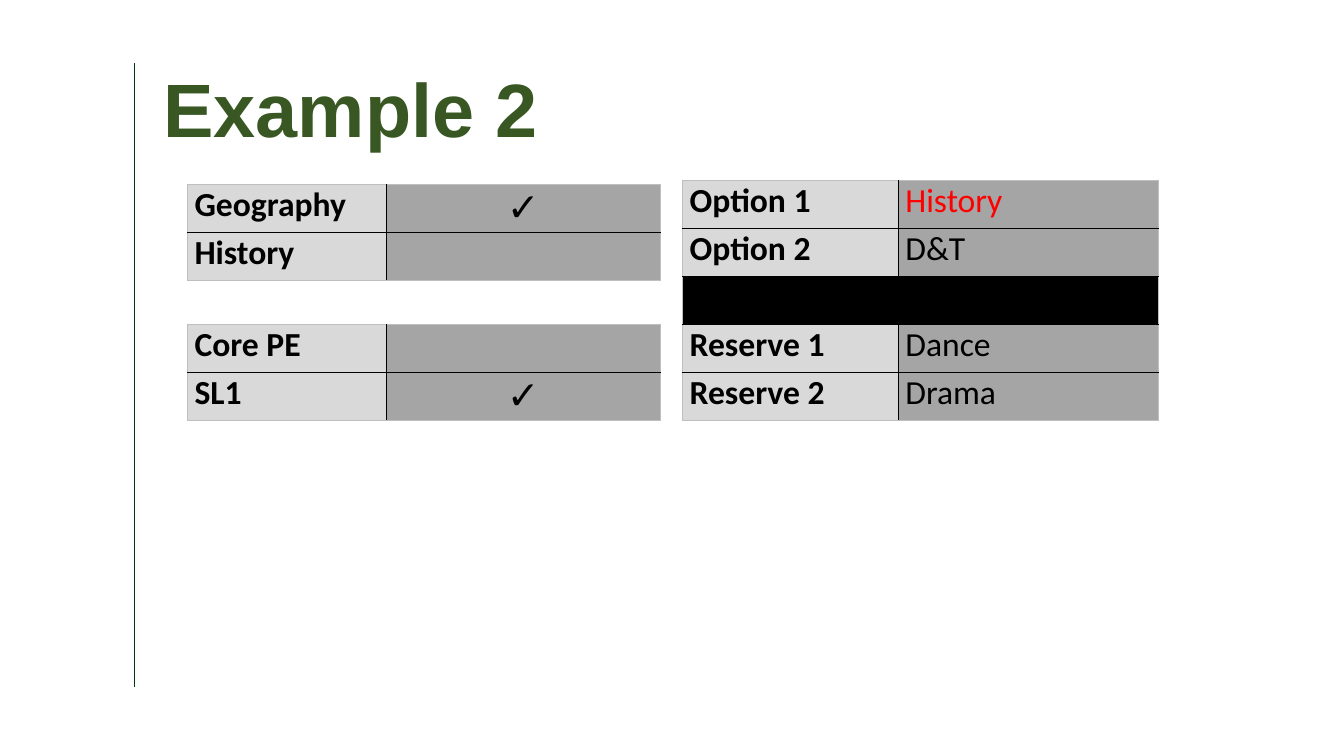
from lxml.etree import SubElement
from pptx import Presentation
from pptx.dml.color import RGBColor
from pptx.enum.shapes import MSO_CONNECTOR as Connector
from pptx.enum.text import MSO_ANCHOR as Anchor, MSO_AUTO_SIZE as AutoSize, PP_ALIGN as Align
from pptx.oxml.ns import qn
from pptx.util import Pt

BLACK = RGBColor(0x00, 0x00, 0x00)
RED = RGBColor(0xFF, 0x00, 0x00)
TITLE_GREEN = RGBColor(0x38, 0x57, 0x23)
RULE_GREEN = RGBColor(0x00, 0x39, 0x07)
LABEL_GREY = RGBColor(0xD9, 0xD9, 0xD9)
VALUE_GREY = RGBColor(0xA5, 0xA5, 0xA5)
EDGE_GREY = RGBColor(0xBF, 0xBF, 0xBF)
TICK = "✓"


def px(length):
    return length * 9144


class SlideBuilder:
    title_font = "Arial"
    table_font = "Calibri"

    def __init__(self, presentation):
        self.slide = presentation.slides.add_slide(presentation.slide_layouts[5])

    def format_runs(self, paragraph, font, size, color, bold):
        for run in paragraph.runs:
            run.font.name = font
            run.font.size = Pt(size)
            run.font.color.rgb = color
            run.font.bold = bold

    def title(self, text, left, top, width, height):
        shape = self.slide.shapes.title
        shape.left, shape.top = px(left), px(top)
        shape.width, shape.height = px(width), px(height)
        frame = shape.text_frame
        frame.text = text
        frame.word_wrap = True
        frame.auto_size = AutoSize.NONE
        frame.vertical_anchor = Anchor.MIDDLE
        paragraph = frame.paragraphs[0]
        paragraph.alignment = Align.LEFT
        paragraph.line_spacing = 0.9
        self.format_runs(paragraph, self.title_font, 54, TITLE_GREEN, True)

    def rule(self, x, top, bottom):
        line = self.slide.shapes.add_connector(
            Connector.STRAIGHT, px(x), px(top), px(x), px(bottom))
        line.line.color.rgb = RULE_GREEN
        line.line.width = Pt(0.5)
        SubElement(line._element.spPr, qn("a:effectLst"))

    def borders(self, cell, outer_sides):
        properties = cell._tc.get_or_add_tcPr()
        for position, side in enumerate("LRTB"):
            color = EDGE_GREY if side in outer_sides else BLACK
            border = properties.makeelement(qn("a:ln" + side), {"w": str(Pt(1))})
            fill = SubElement(border, qn("a:solidFill"))
            SubElement(fill, qn("a:srgbClr"), val=str(color))
            properties.insert(position, border)

    def cell(self, cell, text, fill, color, bold):
        cell.fill.solid()
        cell.fill.fore_color.rgb = fill
        cell.margin_left = cell.margin_right = px(7)
        cell.margin_top = cell.margin_bottom = 0
        if text:
            cell.text_frame.text = text
            paragraph = cell.text_frame.paragraphs[0]
            if text == TICK:
                paragraph.alignment = Align.CENTER
            size = 28 if text == TICK else 24
            self.format_runs(paragraph, self.table_font, size, color, bold)

    def table(self, left, top, widths, height, rows, red_row=None):
        frame = self.slide.shapes.add_table(
            len(rows), 2, px(left), px(top), px(sum(widths)), px(height))
        table = frame.table
        table.first_row = table.horz_banding = False
        for column, width in zip(table.columns, widths):
            column.width = px(width)
        for index, texts in enumerate(rows):
            fills = (LABEL_GREY, VALUE_GREY) if any(texts) else (BLACK, BLACK)
            for column, (text, fill) in enumerate(zip(texts, fills)):
                cell = table.cell(index, column)
                color = RED if column == 1 and index == red_row else BLACK
                self.cell(cell, text, fill, color, column == 0)
                outer_sides = "LR"[column]
                if index == 0:
                    outer_sides += "T"
                if index == len(rows) - 1:
                    outer_sides += "B"
                self.borders(cell, outer_sides)


def main():
    presentation = Presentation()
    presentation.slide_width = px(1333)
    presentation.slide_height = px(750)
    builder = SlideBuilder(presentation)
    builder.rule(133, 63, 682)
    builder.title("Example 2", 152, 40, 1090, 145)
    subject_widths = (197, 272)
    builder.table(186, 183, subject_widths, 95, [("Geography", TICK), ("History", "")])
    builder.table(186, 322, subject_widths, 95, [("Core PE", ""), ("SL1", TICK)])
    choices = [
        ("Option 1", "History"),
        ("Option 2", "D&T"),
        ("", ""),
        ("Reserve 1", "Dance"),
        ("Reserve 2", "Drama"),
    ]
    builder.table(677, 179, (214, 258), 238, choices, red_row=0)
    presentation.save("out.pptx")


if __name__ == "__main__":
    main()
